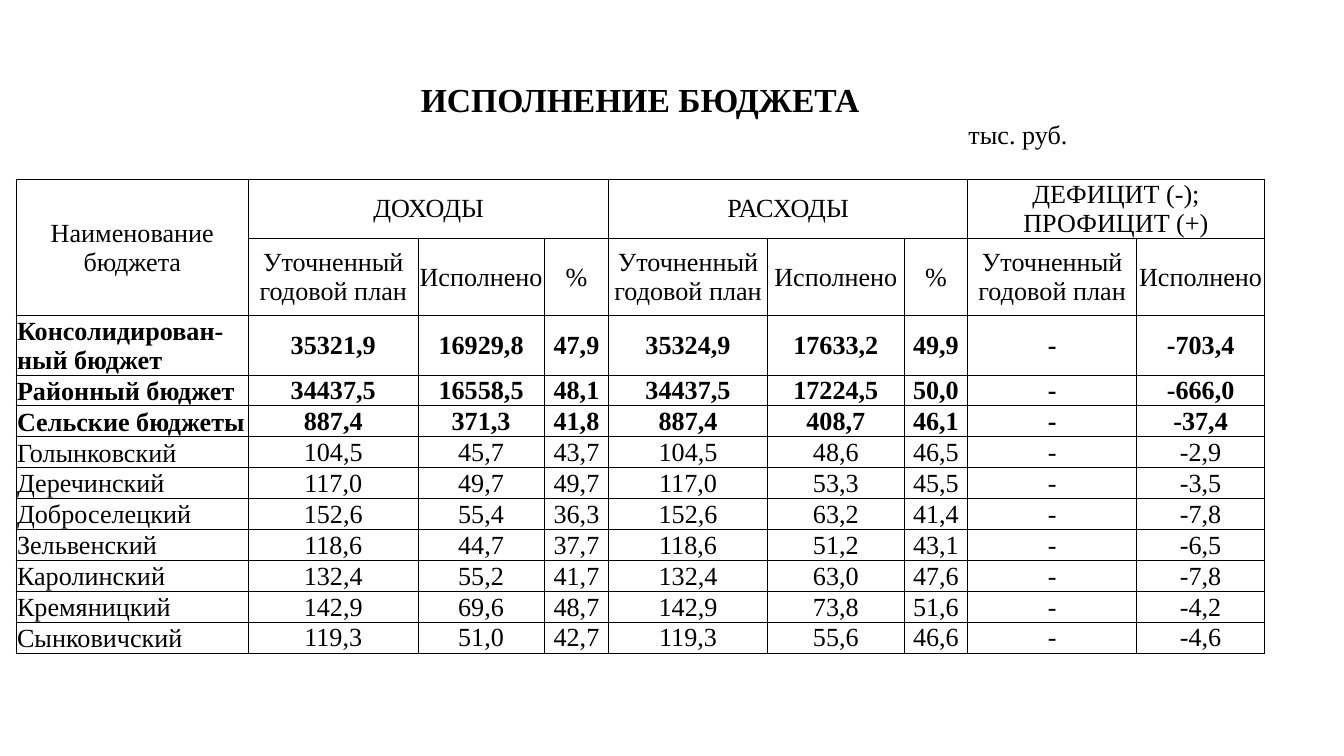
import pptx
import pptx.dml.color
import pptx.enum.text
import pptx.oxml.ns
import pptx.util
from lxml import etree

Inches = pptx.util.Inches
ANCHOR = pptx.enum.text.MSO_ANCHOR
ALIGN = pptx.enum.text.PP_ALIGN
qn = pptx.oxml.ns.qn

COLORS = {"ink": "000000"}
FONT = "Times New Roman"
NO_STYLE = "{2D5ABB26-0587-4C30-8999-92F81FD0307C}"
ALL_SIDES = ("L", "R", "T", "B")

COL_WIDTHS = [1.73, 1.01, 0.25, 0.65, 0.29, 0.48, 1.18,
              0.21, 0.81, 0.09, 0.38, 1.26, 0.52, 0.43]
ROW_HEIGHTS = [0.28, 0.44, 0.43, 0.58, 0.44] + [0.23] * 9
HEADER_ROW, BODY_ROW, BOLD_ROWS = 2, 4, 3

# First grid column and number of grid columns of each cell
UNIT_SPANS = [(2, 2), (4, 2), (6, 2), (8, 2), (11, 2)]
GROUP_SPANS = [(1, 5), (6, 5), (11, 3)]
BODY_SPANS = [(0, 1), (1, 2), (3, 2), (5, 1), (6, 1), (7, 2), (9, 2), (11, 1), (12, 2)]

GROUPS = ["ДОХОДЫ", "РАСХОДЫ", "ДЕФИЦИТ (-); ПРОФИЦИТ (+)"]
PLAN, DONE = "Уточненный годовой план", "Исполнено"
MEASURES = [PLAN, DONE, "%", PLAN, DONE, "%", PLAN, DONE]
BUDGETS = [
    ("Консолидирован-ный бюджет", "35321,9", "16929,8", "47,9", "35324,9", "17633,2", "49,9", "-", "-703,4"),
    ("Районный бюджет", "34437,5", "16558,5", "48,1", "34437,5", "17224,5", "50,0", "-", "-666,0"),
    ("Сельские бюджеты", "887,4", "371,3", "41,8", "887,4", "408,7", "46,1", "-", "-37,4"),
    ("Голынковский", "104,5", "45,7", "43,7", "104,5", "48,6", "46,5", "-", "-2,9"),
    ("Деречинский", "117,0", "49,7", "49,7", "117,0", "53,3", "45,5", "-", "-3,5"),
    ("Доброселецкий", "152,6", "55,4", "36,3", "152,6", "63,2", "41,4", "-", "-7,8"),
    ("Зельвенский", "118,6", "44,7", "37,7", "118,6", "51,2", "43,1", "-", "-6,5"),
    ("Каролинский", "132,4", "55,2", "41,7", "132,4", "63,0", "47,6", "-", "-7,8"),
    ("Кремяницкий", "142,9", "69,6", "48,7", "142,9", "73,8", "51,6", "-", "-4,2"),
    ("Сынковичский", "119,3", "51,0", "42,7", "119,3", "55,6", "46,6", "-", "-4,6"),
]


def set_attrs(obj, values):
    for name, value in values.items():
        setattr(obj, name, value)


def set_borders(cell, sides):
    tcPr = cell._tc.get_or_add_tcPr()
    for side in ALL_SIDES:
        ln = etree.SubElement(tcPr, qn(f"a:ln{side}"), w=str(pptx.util.Pt(0.5)))
        if side in sides:
            fill = etree.SubElement(ln, qn("a:solidFill"))
            etree.SubElement(fill, qn("a:srgbClr"), val=COLORS["ink"])
        else:
            etree.SubElement(ln, qn("a:noFill"))
    cell.fill.background()


def write_cell(cell, text, size=14, bold=False, align=ALIGN.CENTER, anchor=ANCHOR.MIDDLE):
    cell.vertical_anchor = anchor
    cell.text_frame.text = text
    for p in cell.text_frame.paragraphs:
        p.alignment = align
        for r in p.runs:
            set_attrs(r.font, {"name": FONT, "size": pptx.util.Pt(size), "bold": bold})
            r.font.color.rgb = pptx.dml.color.RGBColor.from_string(COLORS["ink"])


def merge_row(table, row, spans):
    for col, count in spans:
        if count > 1:
            table.cell(row, col).merge(table.cell(row, col + count - 1))


def fill_caption(table):
    merge_row(table, 0, [(0, len(COL_WIDTHS))])
    merge_row(table, 1, UNIT_SPANS)
    write_cell(table.cell(0, 0), "ИСПОЛНЕНИЕ БЮДЖЕТА", size=18, bold=True)
    write_cell(table.cell(1, 11), "тыс. руб.", align=ALIGN.LEFT, anchor=ANCHOR.TOP)


def fill_header(table, row):
    table.cell(row, 0).merge(table.cell(row + 1, 0))
    write_cell(table.cell(row, 0), "Наименование\nбюджета")
    for offset, spans, labels in ((0, GROUP_SPANS, GROUPS), (1, BODY_SPANS[1:], MEASURES)):
        merge_row(table, row + offset, spans)
        for (col, _), label in zip(spans, labels):
            write_cell(table.cell(row + offset, col), label)


def fill_body(table, first_row):
    for i, budget in enumerate(BUDGETS):
        row, bold = first_row + i, i < BOLD_ROWS
        merge_row(table, row, BODY_SPANS)
        for (col, _), text in zip(BODY_SPANS, budget):
            place = {"align": ALIGN.LEFT, "anchor": ANCHOR.BOTTOM} if col == 0 else {}
            write_cell(table.cell(row, col), text, bold=bold, **place)


def add_budget_table(slide, left, top):
    frame = slide.shapes.add_table(
        len(ROW_HEIGHTS), len(COL_WIDTHS), Inches(left), Inches(top),
        Inches(sum(COL_WIDTHS)), Inches(sum(ROW_HEIGHTS)))
    table = frame.table
    set_attrs(table, {"first_row": False, "horz_banding": False})
    table._tbl.tblPr.find(qn("a:tableStyleId")).text = NO_STYLE
    for column, width in zip(table.columns, COL_WIDTHS):
        column.width = Inches(width)
    # Row heights, cell margins and borders
    inset = pptx.util.Pt(0.5)
    for i, (row, height) in enumerate(zip(table.rows, ROW_HEIGHTS)):
        row.height = Inches(height)
        sides = ALL_SIDES if i >= HEADER_ROW else ("B",) if i == HEADER_ROW - 1 else ()
        for cell in row.cells:
            set_attrs(cell, {"margin_left": inset, "margin_right": inset,
                             "margin_top": inset, "margin_bottom": 0})
            set_borders(cell, sides)
    fill_caption(table)
    fill_header(table, HEADER_ROW)
    fill_body(table, BODY_ROW)


def main():
    prs = pptx.Presentation()
    # Widescreen page, 16 to 9
    set_attrs(prs, {"slide_width": Inches(10), "slide_height": Inches(10) * 9 // 16})
    slide = prs.slides.add_slide(prs.slide_layouts[6])
    add_budget_table(slide, 0.12, 0.61)
    prs.save("out.pptx")


if __name__ == "__main__":
    main()
